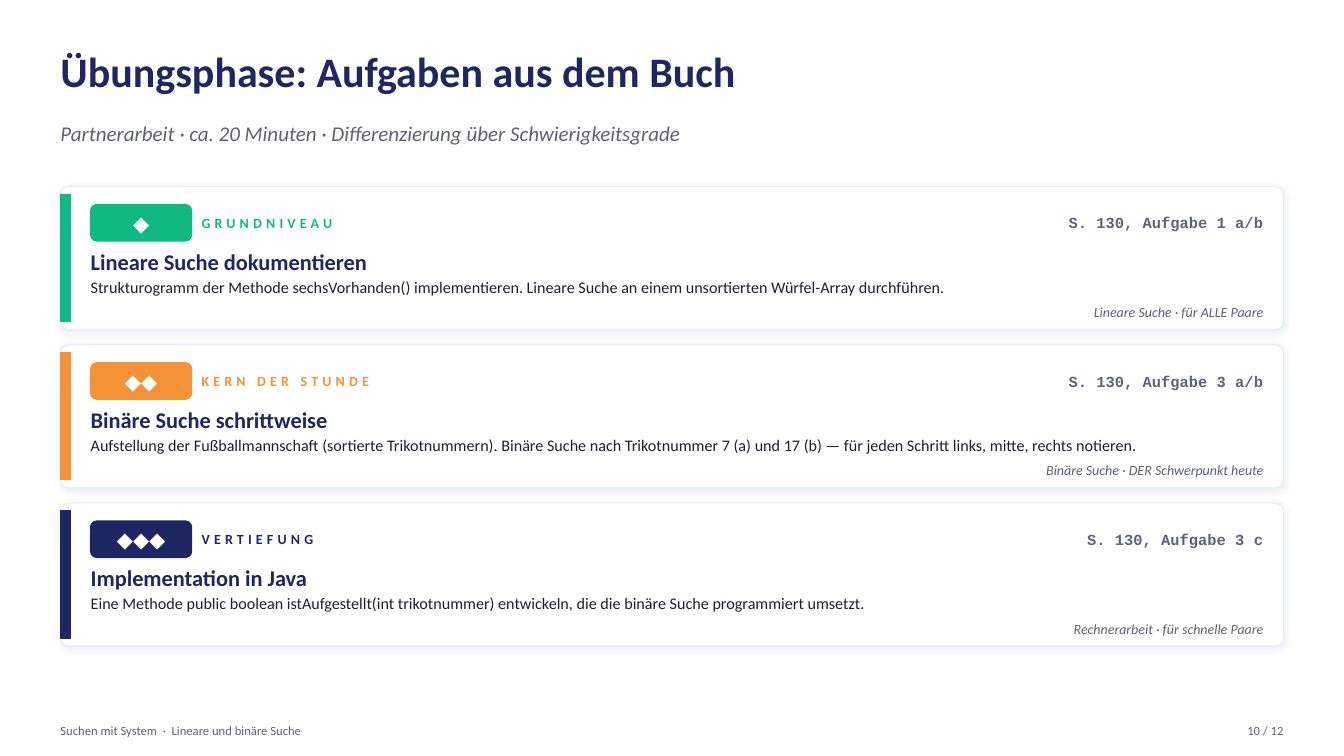
import pptx
import pptx.util
import pptx.dml.color
import pptx.enum.shapes
import pptx.enum.text
import pptx.oxml
import pptx.oxml.ns

Inches = pptx.util.Inches
ALIGN = pptx.enum.text.PP_ALIGN
ANCHOR = pptx.enum.text.MSO_ANCHOR
SHAPE = pptx.enum.shapes.MSO_SHAPE

NAVY, GREY, INK, WHITE = "1E2761", "5A6378", "1A1F36", "FFFFFF"
MARGIN, CONTENT_WIDTH = 0.6, 12.13
CARD_TOP, CARD_HEIGHT, CARD_GAP = 1.85, 1.42, 0.15

TASKS = [
    ("10B981", "GRUNDNIVEAU", "S. 130, Aufgabe 1 a/b", "Lineare Suche dokumentieren",
     "Strukturogramm der Methode sechsVorhanden() implementieren. "
     "Lineare Suche an einem unsortierten Würfel-Array durchführen.",
     "Lineare Suche · für ALLE Paare"),
    ("F39237", "KERN DER STUNDE", "S. 130, Aufgabe 3 a/b", "Binäre Suche schrittweise",
     "Aufstellung der Fußballmannschaft (sortierte Trikotnummern). "
     "Binäre Suche nach Trikotnummer 7 (a) und 17 (b) — "
     "für jeden Schritt links, mitte, rechts notieren.",
     "Binäre Suche · DER Schwerpunkt heute"),
    (NAVY, "VERTIEFUNG", "S. 130, Aufgabe 3 c", "Implementation in Java",
     "Eine Methode public boolean istAufgestellt(int trikotnummer) entwickeln, "
     "die die binäre Suche programmiert umsetzt.",
     "Rechnerarbeit · für schnelle Paare"),
]


def colour(value):
    return pptx.dml.color.RGBColor.from_string(value)


def write(box, text, size, ink, bold=False, italic=False, font="Calibri",
          align=ALIGN.LEFT, anchor=ANCHOR.MIDDLE, spacing=0):
    frame = box.text_frame
    frame.word_wrap = True
    frame.vertical_anchor = anchor
    frame.margin_left = frame.margin_right = frame.margin_top = frame.margin_bottom = 0
    para = frame.paragraphs[0]
    para.alignment = align
    span = para.add_run()
    span.text = text
    if spacing:
        span.font._element.set("spc", str(spacing * 100))
    para.font.name = font
    para.font.size = pptx.util.Pt(size)
    para.font.bold = bold
    para.font.italic = italic
    para.font.color.rgb = colour(ink)


def add_text(page, left, top, width, height, text, size, ink, **style):
    box = page.shapes.add_textbox(Inches(left), Inches(top), Inches(width), Inches(height))
    write(box, text, size, ink, **style)


def add_panel(page, kind, left, top, width, height, fill, line, corner=None):
    panel = page.shapes.add_shape(kind, Inches(left), Inches(top), Inches(width), Inches(height))
    panel.shadow.inherit = False
    panel.fill.solid()
    panel.fill.fore_color.rgb = colour(fill)
    panel.line.color.rgb = colour(line)
    panel.line.width = pptx.util.Pt(1)
    if corner is not None:
        panel.adjustments[0] = corner
    return panel


def add_soft_shadow(panel):
    effects = panel._element.spPr.find(pptx.oxml.ns.qn("a:effectLst"))
    effects.append(pptx.oxml.parse_xml(
        f'<a:outerShdw {pptx.oxml.ns.nsdecls("a")} blurRad="{pptx.util.Pt(6)}" '
        f'dist="{pptx.util.Pt(1)}" dir="5400000" algn="bl" rotWithShape="0">'
        f'<a:srgbClr val="{NAVY}"><a:alpha val="8000"/></a:srgbClr></a:outerShdw>'))


def add_header(page, left, top, width):
    add_text(page, left, top, width, 0.75, "Übungsphase: Aufgaben aus dem Buch",
             30, NAVY, bold=True, anchor=ANCHOR.TOP)
    add_text(page, left, top + 0.75, width, 0.4,
             "Partnerarbeit · ca. 20 Minuten · Differenzierung über Schwierigkeitsgrade",
             15, GREY, italic=True, anchor=ANCHOR.TOP)


def add_task_card(page, left, top, width, height, level, task):
    accent, label, reference, title, description, note = task
    inner = left + 0.3
    right = left + width - 0.2

    # Card and accent bar
    card = add_panel(page, SHAPE.ROUNDED_RECTANGLE, left, top, width, height,
                     WHITE, "E8EEF7", 0.056)
    add_soft_shadow(card)
    add_panel(page, SHAPE.RECTANGLE, left, top + 0.08, 0.1, height - 0.16, accent, accent)

    # Difficulty badge, level and page reference
    badge = add_panel(page, SHAPE.ROUNDED_RECTANGLE, inner, top + 0.18, 1, 0.36,
                      accent, accent, 0.167)
    write(badge, "◆" * level, 15, WHITE, bold=True, align=ALIGN.CENTER)
    add_text(page, inner + 1.1, top + 0.2, 4.5, 0.32, label, 10, accent, bold=True, spacing=3)
    add_text(page, right - 4.2, top + 0.2, 4.2, 0.32, reference, 11, GREY,
             bold=True, font="Courier New", align=ALIGN.RIGHT)

    # Task text and note
    add_text(page, inner, top + 0.55, width - 0.8, 0.38, title, 16, NAVY, bold=True)
    add_text(page, inner, top + 0.9, width - 0.8, 0.4, description, 11.5, INK,
             anchor=ANCHOR.TOP)
    add_text(page, inner, top + 1.12, right - inner, 0.25, note, 10, GREY,
             italic=True, align=ALIGN.RIGHT)


def add_footer(page, left, top, width):
    add_text(page, left, top, 8, 0.3, "Suchen mit System  ·  Lineare und binäre Suche", 9, GREY)
    add_text(page, left + width - 0.8, top, 0.8, 0.3, "10 / 12", 9, GREY, align=ALIGN.RIGHT)


def main():
    deck = pptx.Presentation()
    deck.slide_width = Inches(13.33)
    deck.slide_height = Inches(7.5)
    page = deck.slides.add_slide(deck.slide_layouts[6])
    page.background.fill.solid()
    page.background.fill.fore_color.rgb = colour(WHITE)

    add_header(page, MARGIN, 0.45, CONTENT_WIDTH)
    for index, task in enumerate(TASKS):
        top = CARD_TOP + index * (CARD_HEIGHT + CARD_GAP)
        add_task_card(page, MARGIN, top, CONTENT_WIDTH, CARD_HEIGHT, index + 1, task)
    add_footer(page, MARGIN, 7.1, CONTENT_WIDTH)
    deck.save("out.pptx")


if __name__ == "__main__":
    main()
